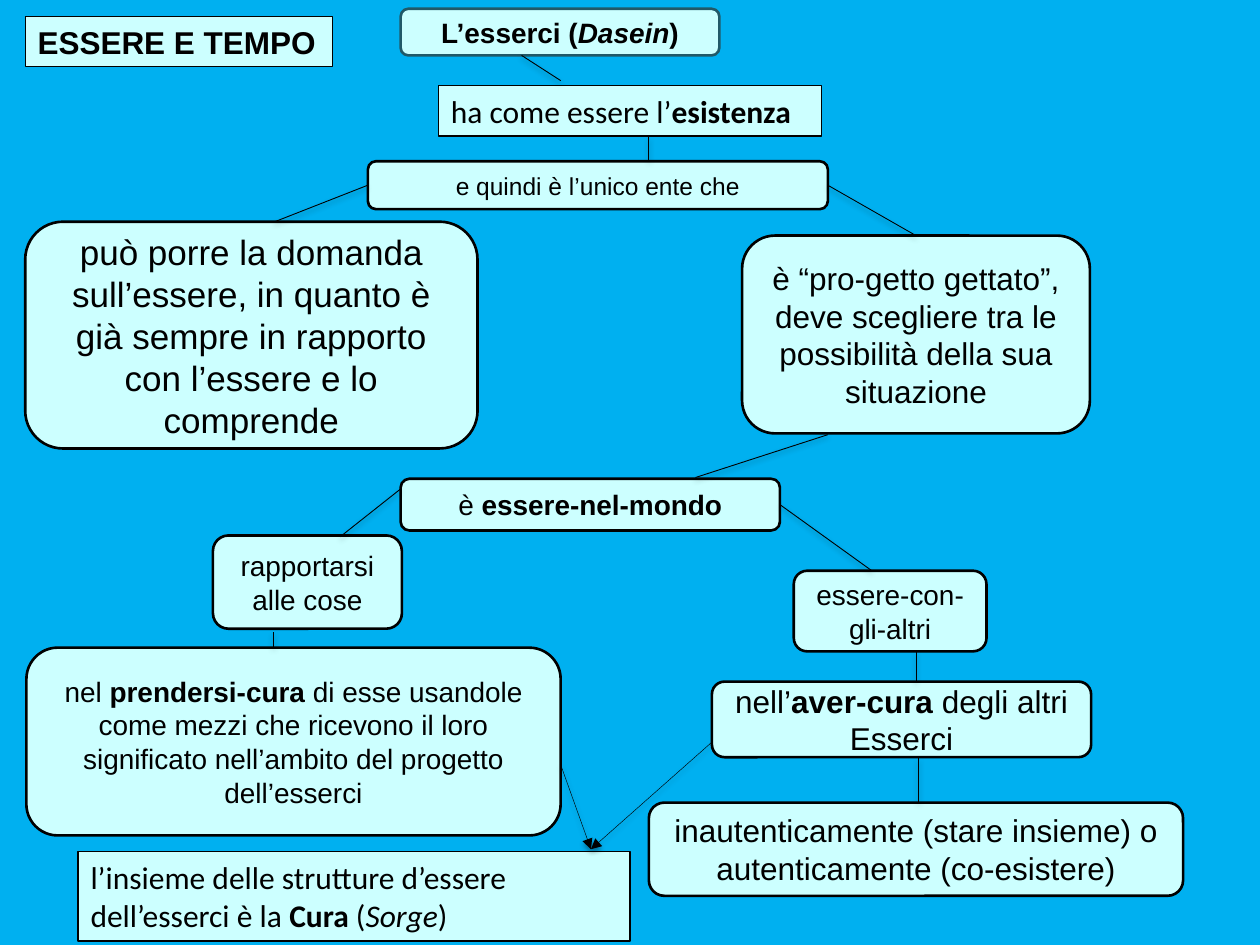
from lxml.etree import SubElement
from pptx import Presentation
from pptx.dml.color import RGBColor
from pptx.enum.shapes import MSO_CONNECTOR, MSO_SHAPE
from pptx.enum.text import MSO_ANCHOR, MSO_AUTO_SIZE, PP_ALIGN
from pptx.oxml.ns import qn
from pptx.util import Emu, Pt

PX = 9144  # EMU per px, 100 px to the inch
COLORS = {"background": "00B0F0", "box": "CCFFFF", "ink": "000000", "teal": "215968"}
LEFT, RIGHT, TOP = 1, 3, 0


def px(*values):
    return [Emu(v * PX) for v in values]


def rgb(name):
    return RGBColor.from_string(COLORS[name])


def styled_runs(text):
    """Yield (text, format) pieces; * switches bold and _ switches italic."""
    for i, part in enumerate(text.split("*")):
        for j, piece in enumerate(part.split("_")):
            if piece:
                yield piece, {"bold": i % 2 == 1, "italic": j % 2 == 1}


class ConceptMap:
    NODE = {"word_wrap": True, "vertical_anchor": MSO_ANCHOR.MIDDLE}
    LABEL = {"word_wrap": True, "vertical_anchor": MSO_ANCHOR.TOP,
             "auto_size": MSO_AUTO_SIZE.SHAPE_TO_FIT_TEXT}

    def __init__(self, slide):
        self.s = slide
        fill = slide.background.fill
        fill.solid()
        fill.fore_color.rgb = rgb("background")

    def box(self, kind, at, text, size, font, align, frame, border, width):
        sp = self.s.shapes.add_shape(kind, *px(*at))
        sp.shadow.inherit = False
        sp.fill.solid()
        sp.fill.fore_color.rgb = rgb("box")
        sp.line.color.rgb = rgb(border)
        sp.line.width = Pt(width)
        tf = sp.text_frame
        for name, value in frame.items():
            setattr(tf, name, value)
        p = tf.paragraphs[0]
        p.alignment = align
        for piece, style in styled_runs(text):
            r = p.add_run()
            r.text = piece
            r.font.color.rgb = rgb("ink")
            for name, value in {"name": font, "size": Pt(size), **style}.items():
                setattr(r.font, name, value)
        return sp

    def node(self, at, text, size, border="ink"):
        return self.box(MSO_SHAPE.ROUNDED_RECTANGLE, at, text, size, "Arial",
                        PP_ALIGN.CENTER, self.NODE, border, 1.5)

    def label(self, at, text, font="Calibri"):
        return self.box(MSO_SHAPE.RECTANGLE, at, text, 18, font,
                        PP_ALIGN.LEFT, self.LABEL, "ink", 0.75)

    def link(self, ends, begin=None, end=None, width=0.5):
        """Draw a line; begin and end are (shape, side) pairs to join."""
        c = self.s.shapes.add_connector(MSO_CONNECTOR.STRAIGHT, *px(*ends))
        if begin:
            c.begin_connect(*begin)
        if end:
            c.end_connect(*end)
        c.line.color.rgb = rgb("ink")
        c.line.width = Pt(width)
        effects = SubElement(c._element.spPr, qn("a:effectLst"))
        shadow = SubElement(effects, qn("a:outerShdw"), blurRad=str(Pt(3.1)),
                            dist=str(Pt(1.6)), dir="5400000", rotWithShape="0")
        color = SubElement(shadow, qn("a:srgbClr"), val=COLORS["ink"])
        SubElement(color, qn("a:alpha"), val="38000")
        return c

    def arrow(self, ends):
        c = self.link(ends, width=0.25)
        SubElement(c.line._get_or_add_ln(), qn("a:tailEnd"), type="triangle")


def main():
    prs = Presentation()
    prs.slide_width, prs.slide_height = px(1000, 750)
    m = ConceptMap(prs.slides.add_slide(prs.slide_layouts[6]))

    m.node((318, 7, 253, 37), "*L’esserci (_Dasein_)*", 16, "teal")
    only_being = m.node((292, 128, 365, 38), "e quindi è l’unico ente che", 14)
    in_world = m.node((318, 380, 301, 41), "è* essere-nel-mondo*", 16)
    m.node((20, 176, 359, 180), "può porre la domanda sull’essere, in quanto è già sempre "
           "in rapporto con l’essere e lo comprende", 20)
    m.node((630, 453, 153, 64), "essere-con-gli-altri", 16)
    project = m.node((589, 187, 276, 157), "è “pro-getto gettato”, deve scegliere tra le "
                     "possibilità della sua situazione", 18)
    m.label((20, 13, 244, 40), "*ESSERE E TEMPO*", "Arial")
    m.node((21, 514, 424, 149), "nel *prendersi-cura *di esse usandole come mezzi che ricevono "
           "il loro significato nell’ambito del progetto dell’esserci", 16)
    m.node((565, 541, 301, 60), "nell’*aver-cura* degli altri Esserci", 18)
    m.node((515, 637, 424, 74),
           "inautenticamente (stare insieme) o autenticamente (co-esistere)", 18)
    m.node((169, 425, 150, 74), "rapportarsi alle cose", 16)
    m.label((348, 68, 304, 40), "ha come essere l’*esistenza*")

    m.link((414, 44, 445, 64))
    m.link((515, 109, 515, 128))
    m.link((292, 147, 218, 176), begin=(only_being, LEFT))
    m.link((657, 147, 727, 187), begin=(only_being, RIGHT), end=(project, TOP))
    m.link((657, 345, 552, 379))
    m.link((318, 388, 270, 426))
    m.link((619, 401, 692, 453), begin=(in_world, RIGHT))
    m.link((217, 502, 217, 514))
    m.link((727, 517, 727, 541))
    m.link((729, 602, 729, 637))

    m.label((62, 676, 438, 71),
            "l’insieme delle strutture d’essere dell’esserci è la *Cura* (_Sorge_)")
    for start in ((445, 607), (565, 589)):
        m.arrow((*start, 469, 674))

    prs.save("out.pptx")


if __name__ == "__main__":
    main()
